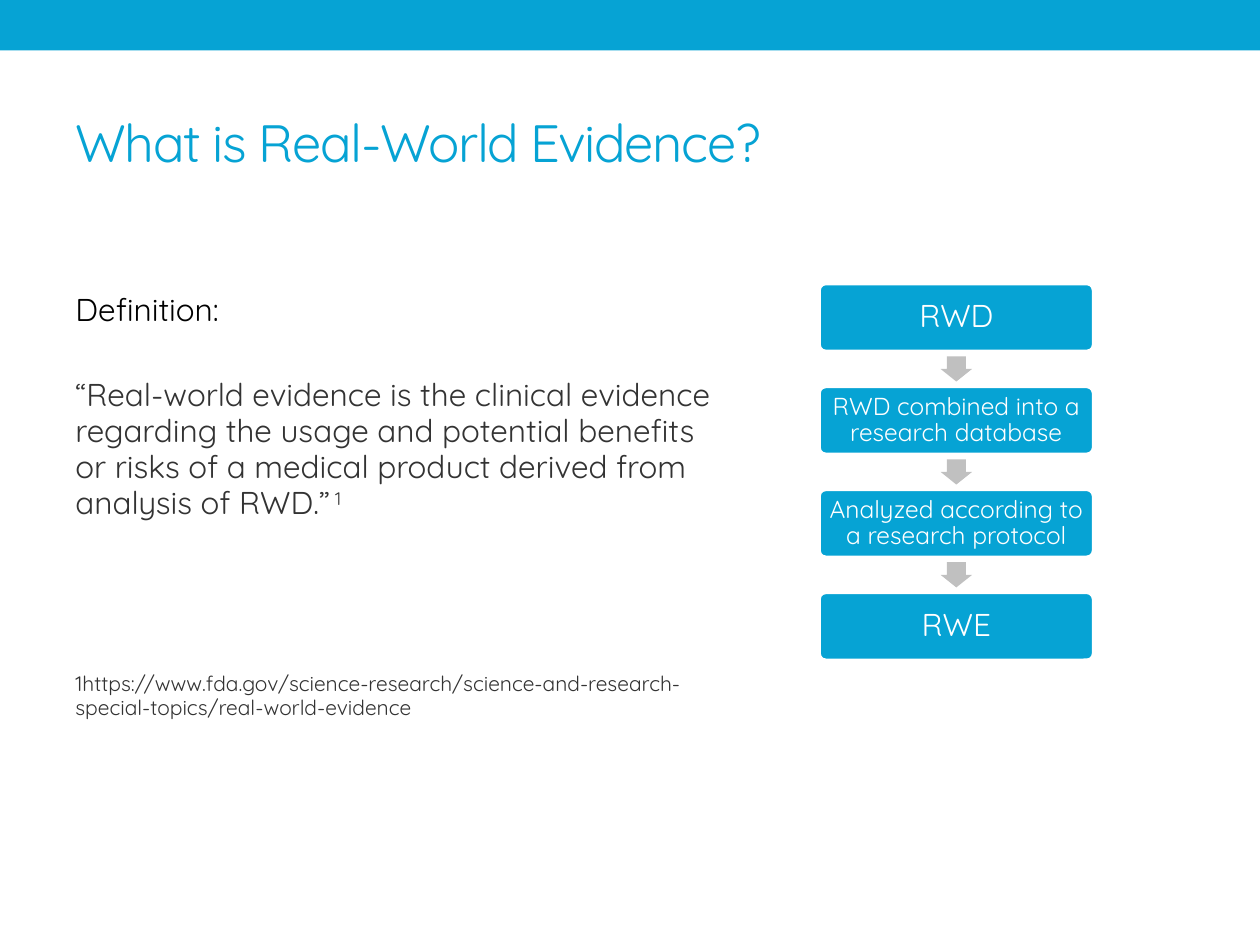
from pptx import Presentation
from pptx.dml.color import RGBColor
from pptx.enum.shapes import MSO_SHAPE
from pptx.enum.text import MSO_ANCHOR, MSO_AUTO_SIZE, PP_ALIGN
from pptx.util import Inches, Pt

RECT, ROUND, DOWN = MSO_SHAPE.RECTANGLE, MSO_SHAPE.ROUNDED_RECTANGLE, MSO_SHAPE.DOWN_ARROW
MIDDLE = MSO_ANCHOR.MIDDLE
LEFT, CENTER = PP_ALIGN.LEFT, PP_ALIGN.CENTER
FONT = "Quicksand"
COLORS = {"blue": "06A3D4", "gray": "C0C0C0", "text": "333333",
          "black": "000000", "white": "FFFFFF"}


def rgb(name):
    return RGBColor.from_string(COLORS[name])


def write(par, text, size=18, color="text", align=LEFT, lines=1.0, before=0, **attrs):
    """Add a run to a paragraph; attrs are raw run attributes (spc, baseline)."""
    par.alignment = align
    par.line_spacing = lines
    par.space_before = Pt(before)
    run = par.add_run()
    run.text = text
    run.font.name = FONT
    run.font.size = Pt(size)
    run.font.color.rgb = rgb(color)
    for key, value in attrs.items():
        run.font._element.set(key, value)


prs = Presentation()
prs.slide_width, prs.slide_height = Inches(10), Inches(7.5)
slide = prs.slides.add_slide(prs.slide_layouts[5])
shapes = slide.shapes

# Top band and title
band = shapes.add_shape(RECT, 0, 0, Inches(10), Inches(0.4))
band.shadow.inherit = False
band.fill.solid()
band.fill.fore_color.rgb = rgb("blue")
band.line.fill.background()

title = shapes.title
title.left, title.top = Inches(0.5), Inches(0.58)
title.width, title.height = Inches(9), Inches(1.08)
title.text_frame.vertical_anchor = MIDDLE
title.text_frame.auto_size = MSO_AUTO_SIZE.NONE
write(title.text_frame.paragraphs[0], "What is Real-World Evidence?",
      size=30, color="blue", spc="-80")

# Definition and its source
body = shapes.add_textbox(Inches(0.5), Inches(2.25), Inches(5.25), Inches(3.74)).text_frame
body.word_wrap = True
write(body.paragraphs[0], "Definition:", color="black")
quote = body.add_paragraph()
write(quote, "“Real-world evidence is the clinical evidence regarding the usage and "
      "potential benefits or risks of a medical product derived from analysis of RWD.”",
      lines=0.95, before=29)
write(quote, " 1", lines=0.95, before=29, baseline="30000")
write(body.add_paragraph(), "1https://www.fda.gov/science-research/"
      "science-and-research-special-topics/real-world-evidence",
      size=12, lines=0.95, before=86)

# Flow from data to evidence
steps = [("RWD", 18), ("RWD combined into a research database", 14),
         ("Analyzed according to a research protocol", 14), ("RWE", 18)]
x, y, wide, high, pitch = 6.5, 2.25, 2.18, 0.54, 0.817
tip_w, tip_h = 0.25, 0.2

for i, (text, size) in enumerate(steps):
    top = y + i * pitch
    box = shapes.add_shape(ROUND, Inches(x), Inches(top), Inches(wide), Inches(high))
    box.shadow.inherit = False
    box.adjustments[0] = 0.1
    box.fill.solid()
    box.fill.fore_color.rgb = rgb("blue")
    box.line.color.rgb = rgb("white")
    box.line.width = Pt(2.08)
    frame = box.text_frame
    frame.word_wrap = True
    frame.vertical_anchor = MIDDLE
    frame.margin_left = frame.margin_right = Inches(0.06)
    frame.margin_top = frame.margin_bottom = Inches(0.06)
    write(frame.paragraphs[0], text, size=size, color="white", align=CENTER, lines=0.9)

    if i < len(steps) - 1:
        gap = pitch - high
        tip = shapes.add_shape(DOWN, Inches(x + (wide - tip_w) / 2),
                               Inches(top + high + (gap - tip_h) / 2),
                               Inches(tip_w), Inches(tip_h))
        tip.shadow.inherit = False
        tip.adjustments[0], tip.adjustments[1] = 0.6, 0.5
        tip.fill.solid()
        tip.fill.fore_color.rgb = rgb("gray")
        tip.line.fill.background()

prs.save("out.pptx")
